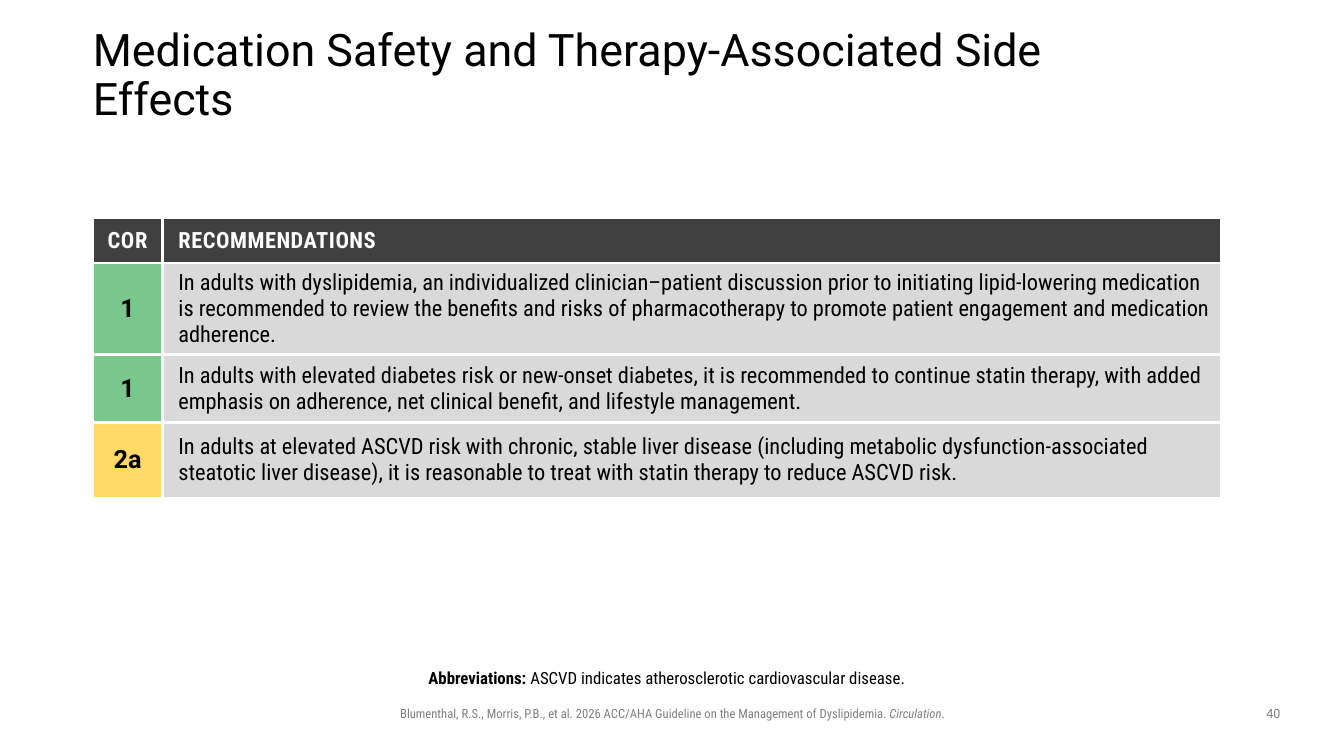
from dataclasses import dataclass

from lxml import etree
from pptx import Presentation
from pptx.dml.color import RGBColor
from pptx.enum.text import MSO_ANCHOR, MSO_AUTO_SIZE, PP_ALIGN
from pptx.oxml.ns import qn
from pptx.util import Pt

EMU_PER_PX = 9144  # 100 px to the inch
LEFT, CENTER = PP_ALIGN.LEFT, PP_ALIGN.CENTER
TOP, MIDDLE, BOTTOM = MSO_ANCHOR.TOP, MSO_ANCHOR.MIDDLE, MSO_ANCHOR.BOTTOM
NO_AUTOFIT = MSO_AUTO_SIZE.NONE
TITLE_ONLY = 5


@dataclass(frozen=True)
class Theme:
    sans: str = "Roboto"
    condensed: str = "Roboto Condensed"
    black: str = "000000"
    white: str = "FFFFFF"
    grey: str = "808080"
    header: str = "404040"
    body: str = "D9D9D9"
    title_size: int = 32
    class_size: int = 18
    table_size: int = 16
    note_size: int = 12
    footer_size: int = 9
    border: float = 2.25


THEME = Theme()
CLASS_FILLS = {"1": "79C78D", "2a": "FFDA68"}

TITLE = "Medication Safety and Therapy-Associated Side Effects"
RECOMMENDATIONS = [
    ("1", 91, "In adults with dyslipidemia, an individualized clinician–patient discussion prior to "
     "initiating lipid-lowering medication is recommended to review the benefits and risks of "
     "pharmacotherapy to promote patient engagement and medication adherence."),
    ("1", 67, "In adults with elevated diabetes risk or new-onset diabetes, it is recommended to "
     "continue statin therapy, with added emphasis on adherence, net clinical beneﬁt, and "
     "lifestyle management."),
    ("2a", 75, "In adults at elevated ASCVD risk with chronic, stable liver disease (including "
     "metabolic dysfunction-associated steatotic liver disease), it is reasonable to treat with "
     "statin therapy to reduce ASCVD risk."),
]


def px(length):
    return round(length * EMU_PER_PX)


def add_run(para, text, font, size, color, bold=False, italic=False, spacing=0):
    span = para.add_run()
    span.text = text
    span.font.name = font
    span.font.size = Pt(size)
    span.font.bold = bold
    span.font.italic = italic
    span.font.color.rgb = RGBColor.from_string(color)
    if spacing:
        span.font._element.set("spc", str(round(spacing * 100)))


def set_insets(target, left, top, right, bottom):
    target.margin_left, target.margin_top = px(left), px(top)
    target.margin_right, target.margin_bottom = px(right), px(bottom)


def set_borders(cell):
    properties = cell._tc.get_or_add_tcPr()
    for position, side in enumerate(("lnL", "lnR", "lnT", "lnB")):
        line = etree.Element(qn(f"a:{side}"), w=str(Pt(THEME.border)))
        fill = etree.SubElement(line, qn("a:solidFill"))
        etree.SubElement(fill, qn("a:srgbClr"), val=THEME.white)
        properties.insert(position, line)


def prepare_cell(cell, fill, inset=None, align=LEFT, indent=0):
    """Format a cell and return its paragraph."""
    cell.fill.solid()
    cell.fill.fore_color.rgb = RGBColor.from_string(fill)
    cell.vertical_anchor = MIDDLE
    if inset is not None:
        set_insets(cell, inset, inset, inset, inset)
    set_borders(cell)
    para = cell.text_frame.paragraphs[0]
    para.alignment = align
    if indent:
        properties = para._p.get_or_add_pPr()
        properties.set("marL", str(px(indent)))
        properties.set("indent", "0")
    return para


def place_title(page, left, top, width, height):
    title = page.shapes.title
    title.left, title.top, title.width, title.height = map(px, (left, top, width, height))
    frame = title.text_frame
    frame.word_wrap = True
    frame.auto_size = NO_AUTOFIT
    frame.vertical_anchor = MIDDLE
    set_insets(frame, 0, 0, 0, 0)
    para = frame.paragraphs[0]
    para.alignment = LEFT
    para.line_spacing = 0.9
    add_run(para, TITLE, THEME.sans, THEME.title_size, THEME.black)


def add_recommendations(page, left, top, width, class_width=69, header_height=45):
    heights = [header_height] + [height for _, height, _ in RECOMMENDATIONS]
    frame = page.shapes.add_table(len(heights), 2, px(left), px(top), px(width), px(sum(heights)))
    table = frame.table
    table.horz_banding = False
    table.columns[0].width = px(class_width)
    table.columns[1].width = px(width - class_width)
    for row, height in zip(table.rows, heights):
        row.height = px(height)

    headings = (("COR", CENTER, 0, 0.5), ("RECOMMENDATIONS", LEFT, 6, 0.4))
    for column, (heading, align, indent, spacing) in enumerate(headings):
        para = prepare_cell(table.cell(0, column), THEME.header, align=align, indent=indent)
        add_run(para, heading, THEME.condensed, THEME.table_size, THEME.white,
                bold=True, spacing=spacing)

    for row, (grade, _, advice) in enumerate(RECOMMENDATIONS, start=1):
        para = prepare_cell(table.cell(row, 0), CLASS_FILLS[grade], inset=5, align=CENTER)
        add_run(para, grade, THEME.sans, THEME.class_size, THEME.black, bold=True)
        para = prepare_cell(table.cell(row, 1), THEME.body, inset=4, indent=12)
        add_run(para, advice, THEME.condensed, THEME.table_size, THEME.black)


def add_centered_text(page, left, top, width, height, anchor=TOP, left_inset=10):
    """Add a text box and return its centred paragraph."""
    box = page.shapes.add_textbox(px(left), px(top), px(width), px(height))
    frame = box.text_frame
    frame.word_wrap = True
    frame.vertical_anchor = anchor
    set_insets(frame, left_inset, 5, 10, 5)
    para = frame.paragraphs[0]
    para.alignment = CENTER
    return para


def add_abbreviations(page, left, top, width, height):
    para = add_centered_text(page, left, top, width, height, anchor=BOTTOM, left_inset=0)
    para.line_spacing = 0.9
    style = (THEME.condensed, THEME.note_size, THEME.black)
    add_run(para, "Abbreviations: ", *style, bold=True)
    add_run(para, "ASCVD indicates atherosclerotic cardiovascular disease.", *style)


def add_citation(page, left, top, width, height):
    para = add_centered_text(page, left, top, width, height)
    style = (THEME.condensed, THEME.footer_size, THEME.grey)
    add_run(para, "Blumenthal, R.S., Morris, P.B., et al. 2026 ACC/AHA Guideline on the "
            "Management of Dyslipidemia. ", *style)
    add_run(para, "Circulation", *style, italic=True)
    add_run(para, ".", *style)


def add_page_number(page, left, top, width, height):
    para = add_centered_text(page, left, top, width, height)
    add_run(para, "40", THEME.sans, THEME.footer_size, THEME.grey)


def main():
    deck = Presentation()
    deck.slide_width, deck.slide_height = px(1333), px(750)
    page = deck.slides.add_slide(deck.slide_layouts[TITLE_ONLY])
    add_citation(page, 236, 695, 862, 25)
    place_title(page, 92, 40, 1042, 72)
    add_recommendations(page, 92, 216, 1119)
    add_abbreviations(page, 188, 642, 957, 46)
    add_page_number(page, 1242, 695, 42, 26)
    deck.save("out.pptx")


if __name__ == "__main__":
    main()
